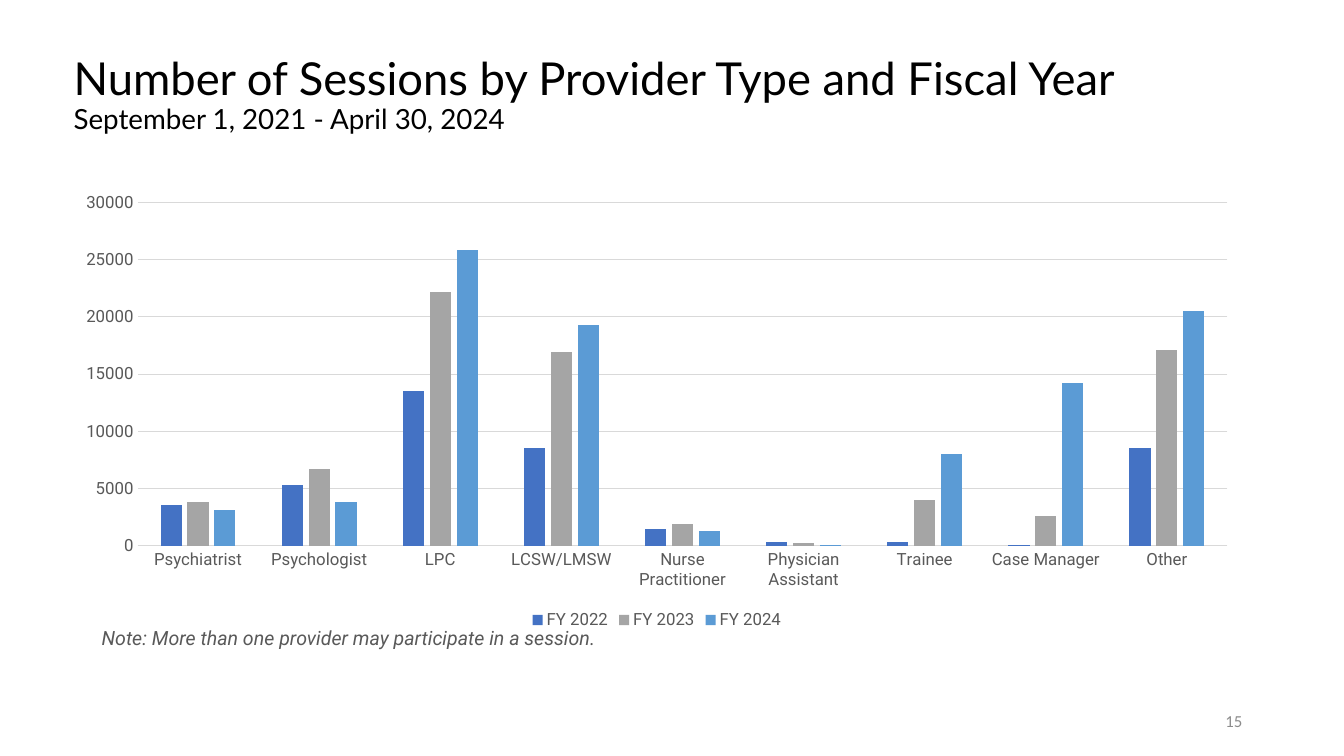
"""Build the slide on sessions by provider type and fiscal year."""
import pptx
import pptx.util
import pptx.chart.data
import pptx.dml.color
import pptx.enum.chart
import pptx.enum.text
import pptx.oxml.ns
import lxml.etree

Inches = pptx.util.Inches
Pt = pptx.util.Pt
XL = pptx.enum.chart
TX = pptx.enum.text


def paint(text):
    """Turn a hex string into a colour."""
    return pptx.dml.color.RGBColor.from_string(text)


class Deck:
    """Hold the style and the current slide."""

    ink = "595959"
    rule = "D9D9D9"
    face = "Roboto"

    def __init__(self):
        """Open a wide deck with one title slide."""
        self.show = pptx.Presentation()
        self.show.slide_width = Inches(13.33)
        self.show.slide_height = Inches(7.5)
        self.slide = self.show.slides.add_slide(self.show.slide_layouts[5])

    def style(self, font, size, color=ink, **more):
        """Set size, colour and other values on a font."""
        for key, value in {"size": Pt(size), "name": self.face, **more}.items():
            setattr(font, key, value)
        font.color.rgb = paint(color)

    def line(self, form):
        """Draw a thin grey rule."""
        form.line.color.rgb = paint(self.rule)
        form.line.width = Pt(0.75)

    def title(self, box, *rows):
        """Fill the title with rows of (text, size)."""
        shape = self.slide.shapes.title
        for key, value in zip(("left", "top", "width", "height"), box):
            setattr(shape, key, Inches(value))
        frame = shape.text_frame
        frame.word_wrap = True
        frame.auto_size = TX.MSO_AUTO_SIZE.NONE
        frame.vertical_anchor = TX.MSO_ANCHOR.MIDDLE
        para = frame.paragraphs[0]
        para.alignment = TX.PP_ALIGN.LEFT
        para.line_spacing = 0.9
        for spot, (text, size) in enumerate(rows):
            if spot:
                para.add_line_break()
            run = para.add_run()
            run.text = text
            self.style(run.font, size, "000000", name="Lato")
        qn = pptx.oxml.ns.qn
        for gap in shape.element.iter(qn("a:br")):
            mark = lxml.etree.SubElement(gap, qn("a:rPr"))
            mark.set("sz", str(round(rows[0][1] * 100)))

    def text(self, box, words, size, align="LEFT", wrap=True, **look):
        """Add a box with one line of text."""
        frame = self.slide.shapes.add_textbox(*map(Inches, box)).text_frame
        frame.word_wrap = wrap
        frame.vertical_anchor = TX.MSO_ANCHOR.MIDDLE
        para = frame.paragraphs[0]
        para.alignment = getattr(TX.PP_ALIGN, align)
        run = para.add_run()
        run.text = words
        self.style(run.font, size, **look)

    def chart(self, box, names, rows, top, step):
        """Add a column chart from rows of (name, colour, values)."""
        data = pptx.chart.data.CategoryChartData()
        data.categories = names
        for name, _, values in rows:
            data.add_series(name, values)
        chart = self.slide.shapes.add_chart(
            XL.XL_CHART_TYPE.COLUMN_CLUSTERED, *map(Inches, box), data).chart
        self.style(chart.font, 10, "000000", name="Calibri")
        chart.has_title = False
        chart.has_legend = True
        chart.legend.position = XL.XL_LEGEND_POSITION.BOTTOM
        chart.legend.include_in_layout = False
        self.style(chart.legend.font, 12)
        plot = chart.plots[0]
        for key, value in {"gap_width": 219, "overlap": -27,
                           "vary_by_categories": False}.items():
            setattr(plot, key, value)
        for part, (_, color, _) in zip(plot.series, rows):
            part.format.fill.solid()
            part.format.fill.fore_color.rgb = paint(color)
            part.invert_if_negative = False
        for axis in (chart.category_axis, chart.value_axis):
            axis.major_tick_mark = XL.XL_TICK_MARK.NONE
            axis.minor_tick_mark = XL.XL_TICK_MARK.NONE
            self.style(axis.tick_labels.font, 12)
        self.line(chart.category_axis.format)
        scale = chart.value_axis
        for key, value in {"minimum_scale": 0, "maximum_scale": top,
                           "major_unit": step}.items():
            setattr(scale, key, value)
        scale.format.line.fill.background()
        self.line(scale.major_gridlines.format)


def main():
    """Build and save the slide."""
    deck = Deck()
    deck.title((0.63, 0.48, 12.08, 0.94),
               ("Number of Sessions by Provider Type and Fiscal Year", 32.4),
               ("September 1, 2021 - April 30, 2024", 19.8))
    deck.text((9.42, 6.95, 3, 0.4), "15", 12, "RIGHT",
              color="8C8C8C", name="Calibri")
    names = ("Psychiatrist", "Psychologist", "LPC", "LCSW/LMSW",
             "Nurse Practitioner", "Physician Assistant", "Trainee",
             "Case Manager", "Other")
    rows = (
        ("FY 2022", "4472C4",
         (3600, 5300, 13500, 8500, 1500, 300, 300, 50, 8500)),
        ("FY 2023", "A5A5A5",
         (3800, 6700, 22200, 16900, 1900, 200, 4000, 2600, 17100)),
        ("FY 2024", "5B9BD5",
         (3100, 3800, 25800, 19300, 1300, 100, 8000, 14200, 20500)),
    )
    deck.chart((0.62, 1.82, 11.79, 4.47), names, rows, 30000, 5000)
    deck.text((0.91, 6.16, 5.27, 0.34),
              "Note: More than one provider may participate in a session.",
              14, wrap=False, italic=True)
    deck.show.save("out.pptx")


if __name__ == "__main__":
    main()
